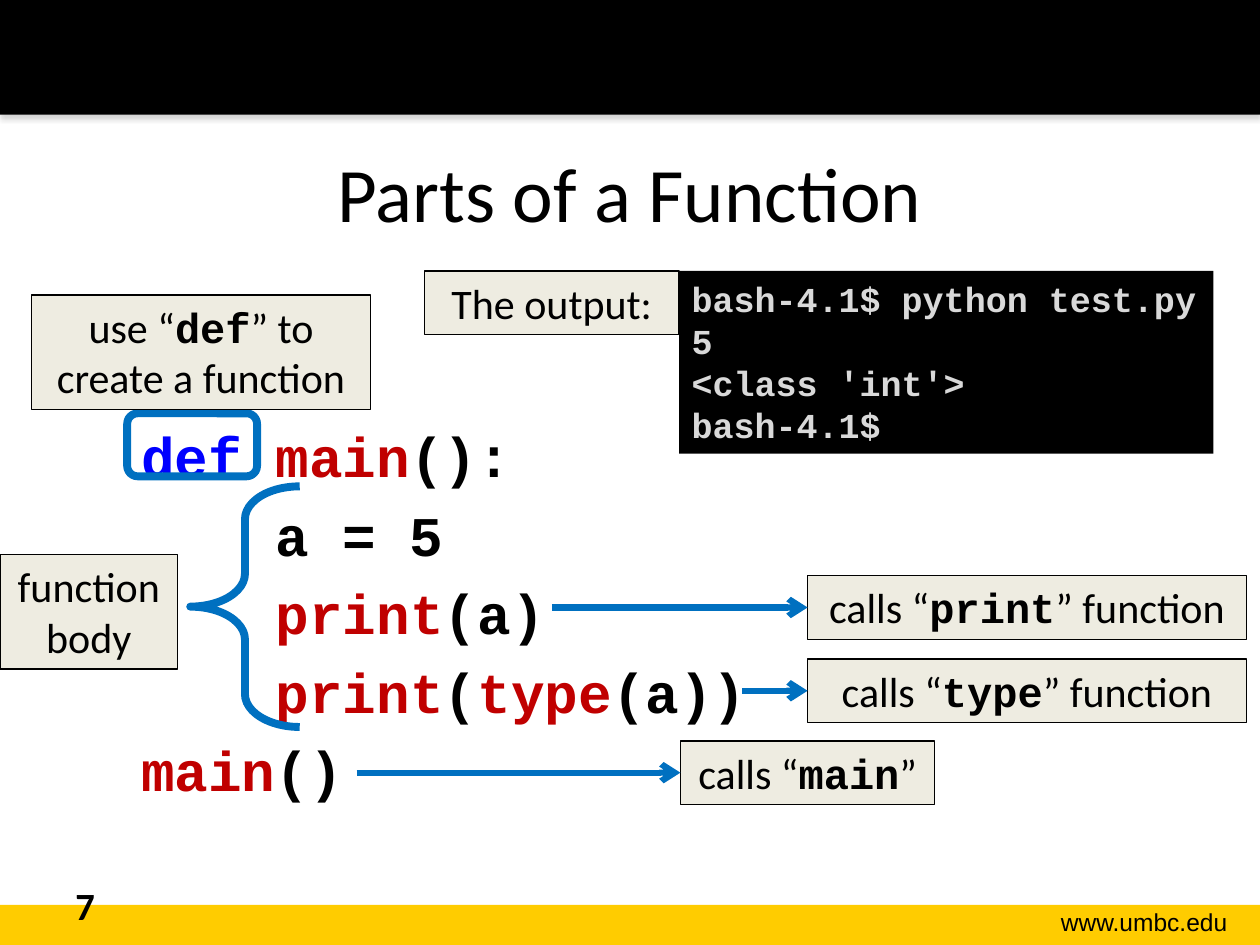
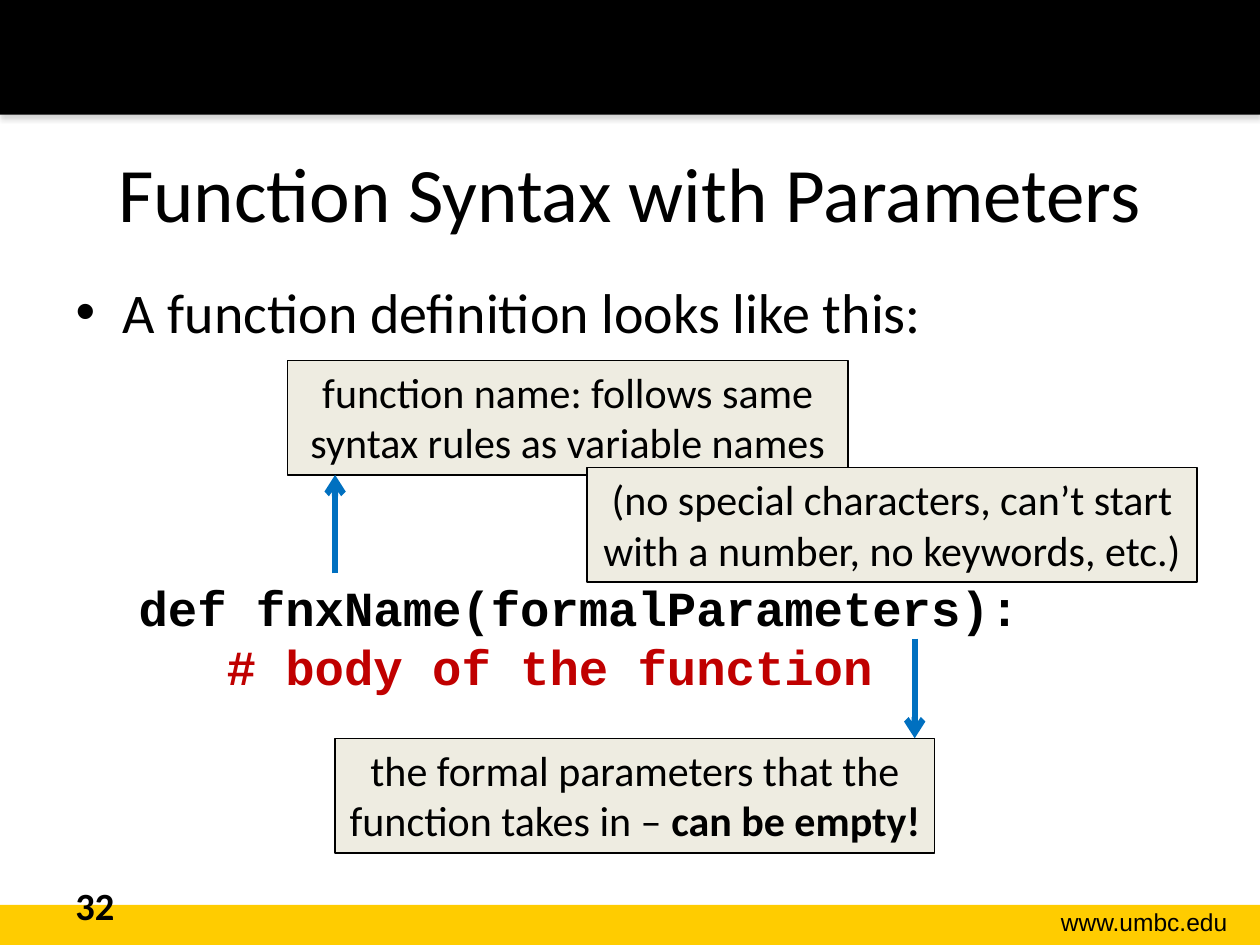
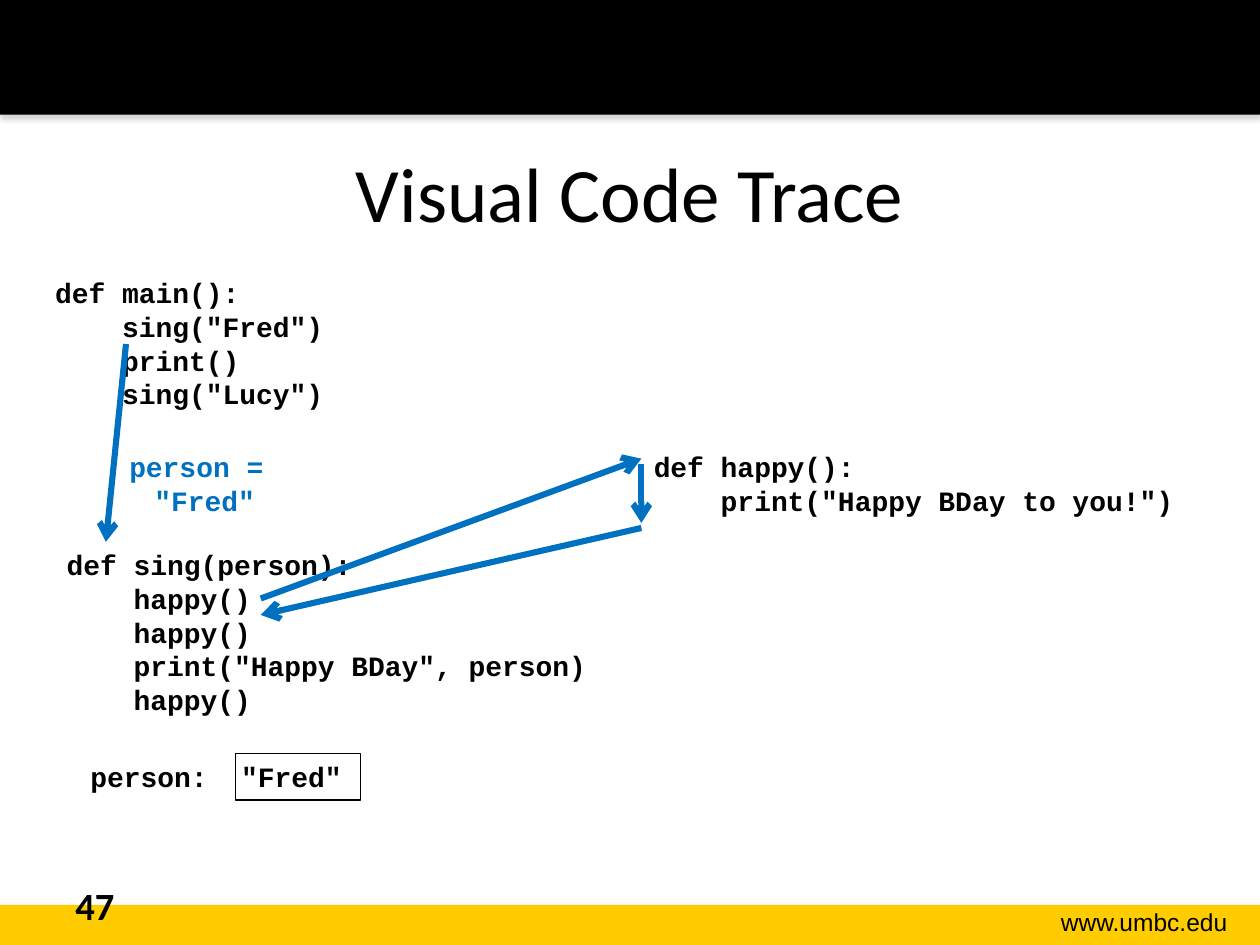
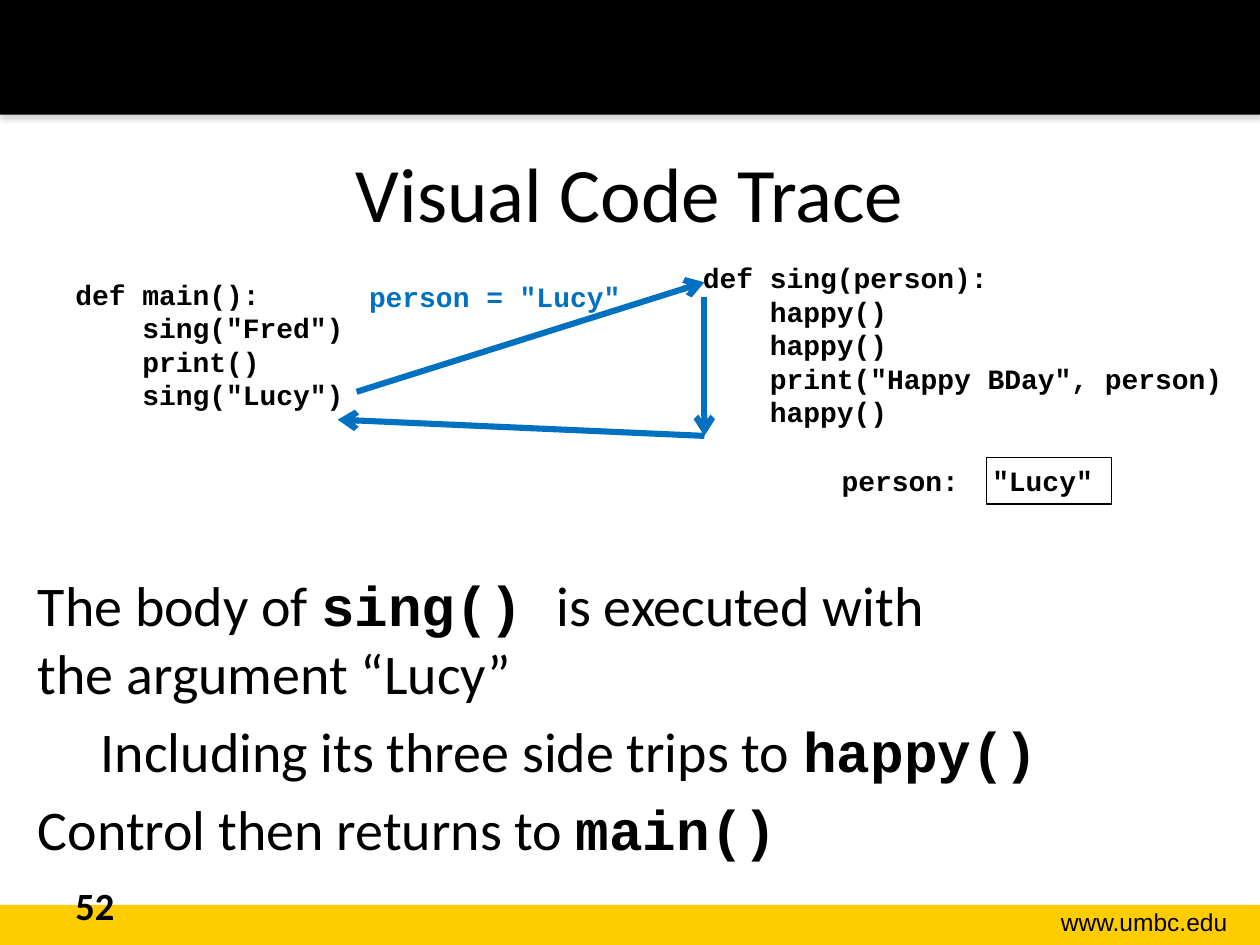
from dataclasses import dataclass
from typing import NamedTuple

from lxml import etree
from pptx import Presentation
from pptx.dml.color import RGBColor
from pptx.enum.shapes import MSO_CONNECTOR, MSO_SHAPE
from pptx.enum.text import MSO_ANCHOR, MSO_AUTO_SIZE, PP_ALIGN
from pptx.oxml.ns import qn
from pptx.util import Pt

RECTANGLE = MSO_SHAPE.RECTANGLE
ROUNDED = MSO_SHAPE.ROUNDED_RECTANGLE
BRACE = MSO_SHAPE.LEFT_BRACE
STRAIGHT = MSO_CONNECTOR.STRAIGHT
LEFT, CENTER, RIGHT = PP_ALIGN.LEFT, PP_ALIGN.CENTER, PP_ALIGN.RIGHT
MIDDLE = MSO_ANCHOR.MIDDLE
NO_AUTOFIT = MSO_AUTO_SIZE.NONE

COLORS = {
    "black": "000000",
    "gold": "FFCC00",
    "shadow": "808080",
    "callout": "EEECE1",
    "accent": "0070C0",
    "keyword": "0000FF",
    "name": "C00000",
    "terminal": "D9D9D9",
}
SANS, MONO, FOOTER_FONT = "Calibri", "Courier New", "Arial"
TITLE_CONTENT, TITLE_ONLY = 1, 5
LEFT_SITE = 1
CALLOUT_ONE_LINE, CALLOUT_TWO_LINES = 36.3, 65.5
TAB = 36

MAIN_CODE = ["def main():", '    sing("Fred")', "    print()", '    sing("Lucy")']
SING_CODE = ["def sing(person):", "    happy()", "    happy()",
             '    print("Happy BDay", person)', "    happy()"]
HAPPY_CODE = ["def happy():", '    print("Happy BDay to you!")']


class Box(NamedTuple):
    left: float
    top: float
    width: float
    height: float

    def lengths(self) -> list:
        return [Pt(value) for value in self]


class Point(NamedTuple):
    x: float
    y: float


class Run(NamedTuple):
    """A piece of text; unset values come from the text's own format."""
    text: str
    color: str | None = None
    font: str | None = None
    bold: bool | None = None


@dataclass
class Call:
    """A callout that explains a call, with an arrow from the code."""
    name: str
    ending: str
    box: Box
    arrow_start: float


def rgb(name: str) -> RGBColor:
    return RGBColor.from_string(COLORS[name])


def code(text: str, color: str | None = None) -> Run:
    return Run(text, color, MONO, True)


def write_text(frame, paragraphs: list, *, size: float, font: str = SANS, color: str = "black",
               bold: bool = False, align=LEFT) -> None:
    """Fill a frame; each paragraph is a string or a list of strings and Runs."""
    for index, content in enumerate(paragraphs):
        paragraph = frame.paragraphs[0] if index == 0 else frame.add_paragraph()
        paragraph.alignment = align
        if index == 0:
            paragraph.space_before = Pt(0)
        for item in [content] if isinstance(content, str) else content:
            piece = item if isinstance(item, Run) else Run(item)
            for line_index, line in enumerate(piece.text.split("\n")):
                if line_index:
                    paragraph.add_line_break()
                run = paragraph.add_run()
                run.text = line
                run.font.name = piece.font or font
                run.font.size = Pt(size)
                run.font.bold = bold if piece.bold is None else piece.bold
                run.font.color.rgb = rgb(piece.color or color)


def add_text(slide, box: Box, paragraphs: list, **text_format):
    frame = slide.shapes.add_textbox(*box.lengths()).text_frame
    frame.word_wrap = True
    write_text(frame, paragraphs, **text_format)


def add_code(slide, box: Box, lines: list, **text_format):
    add_text(slide, box, lines, size=16, font=MONO, bold=True, **text_format)


def add_shape(slide, kind, box: Box, *, fill: str | None = None,
              line: str | None = None, line_width: float = 0.75):
    shape = slide.shapes.add_shape(kind, *box.lengths())
    shape.shadow.inherit = False
    if fill:
        shape.fill.solid()
        shape.fill.fore_color.rgb = rgb(fill)
    else:
        shape.fill.background()
    if line:
        shape.line.color.rgb = rgb(line)
        shape.line.width = Pt(line_width)
    else:
        shape.line.fill.background()
    shape.text_frame.vertical_anchor = MSO_ANCHOR.TOP
    return shape


def add_callout(slide, box: Box, content):
    shape = add_shape(slide, RECTANGLE, box, fill="callout", line="black")
    shape.text_frame.word_wrap = True
    write_text(shape.text_frame, [content], size=24, align=CENTER)
    return shape


def add_arrow(slide, start: Point, end: Point, target=None) -> None:
    """Draw an arrow, joined to the left side of target when given."""
    arrow = slide.shapes.add_connector(STRAIGHT, *(Pt(value) for value in start + end))
    if target is not None:
        arrow.end_connect(target, LEFT_SITE)
    arrow.line.color.rgb = rgb("accent")
    arrow.line.width = Pt(3.5)
    etree.SubElement(arrow.line._get_or_add_ln(), qn("a:tailEnd"), type="arrow")
    etree.SubElement(arrow.element.spPr, qn("a:effectLst"))


def add_variable(slide, left: float, top: float, value: str) -> None:
    """Show the person variable with its value in a box."""
    add_code(slide, Box(left, top, 85, 26.6), ["person:"])
    shape = add_shape(slide, RECTANGLE, Box(left + 90, top, 71.3, 26.6), line="black")
    shape.text_frame.margin_left = Pt(3.2)
    write_text(shape.text_frame, [value], size=16, font=MONO, bold=True)


def fill_body(slide, box: Box, paragraphs: list, **text_format):
    body = slide.placeholders[1]
    body.left, body.top, body.width, body.height = box.lengths()
    body.text_frame.auto_size = NO_AUTOFIT
    write_text(body.text_frame, paragraphs, **text_format)
    return body.text_frame.paragraphs


def remove_bullet(paragraph, indent: float = 0) -> None:
    properties = paragraph._p.get_or_add_pPr()
    properties.set("marL", str(Pt(indent)))
    properties.set("indent", "0")
    etree.SubElement(properties, qn("a:buNone"))


def add_band_shadow(shape) -> None:
    effects = shape.element.spPr.find(qn("a:effectLst"))
    shadow = etree.SubElement(effects, qn("a:outerShdw"), blurRad=str(Pt(3.1)),
                              dist=str(Pt(1.8)), dir="5400000", rotWithShape="0")
    color = etree.SubElement(shadow, qn("a:srgbClr"), val=COLORS["shadow"])
    etree.SubElement(color, qn("a:alpha"), val="35000")


def decorate_master(presentation, slide) -> None:
    """Draw the bands and the address on a slide, then move them to the master."""
    first = len(slide.shapes)
    add_shape(slide, RECTANGLE, Box(0, 517, 720, 23), fill="gold")
    add_band_shadow(add_shape(slide, RECTANGLE, Box(0, 0, 720, 65.5), fill="black"))
    add_text(slide, Box(565.2, 514.8, 143.3, 24.5), ["www.umbc.edu"],
             size=14, font=FOOTER_FONT, align=RIGHT)
    tree = presentation.slide_master.shapes.element
    for index, shape in enumerate(list(slide.shapes)[first:]):
        shape.element.nvSpPr.cNvPr.set("id", str(20 + index))
        tree.append(shape.element)


def add_slide(presentation, layout: int, title: str, number: int):
    slide = presentation.slides.add_slide(presentation.slide_layouts[layout])
    heading = slide.shapes.title
    heading.left, heading.top, heading.width, heading.height = Box(36, 64.8, 648, 90).lengths()
    heading.text_frame.vertical_anchor = MIDDLE
    heading.text_frame.auto_size = NO_AUTOFIT
    write_text(heading.text_frame, [title], size=44, align=CENTER)
    add_text(slide, Box(36, 500.4, 167.8, 28.8), [str(number)], size=22, bold=True)
    return slide


def build_function_parts(presentation):
    slide = add_slide(presentation, TITLE_CONTENT, "Parts of a Function", 7)
    program = [
        [Run("def ", "keyword"), Run("main", "name"), "():"],
        "    a = 5",
        ["    ", Run("print", "name"), "(a)"],
        ["    ", Run("print", "name"), "(", Run("type", "name"), "(a))"],
        [Run("main", "name"), "()"],
    ]
    for paragraph in fill_body(slide, Box(73.4, 237.5, 440.6, 278), program,
                               size=32, font=MONO, bold=True):
        remove_bullet(paragraph)

    add_callout(slide, Box(0, 316.8, 101.5, CALLOUT_TWO_LINES), "function body")
    add_shape(slide, ROUNDED, Box(72.7, 236.2, 74.2, 36), line="accent", line_width=4.5)
    add_callout(slide, Box(18, 168.5, 193.7, CALLOUT_TWO_LINES),
                ["use “", code("def"), "” to create a function"])

    terminal = add_shape(slide, RECTANGLE, Box(388.1, 154.8, 305.3, 104.4), fill="black")
    terminal.text_frame.word_wrap = False
    write_text(terminal.text_frame,
               ["bash-4.1$ python test.py", "5", "<class 'int'>", "bash-4.1$"],
               size=20, font=MONO, color="terminal", bold=True)
    add_callout(slide, Box(242.6, 154.8, 145.4, CALLOUT_ONE_LINE), "The output:")

    brace = add_shape(slide, BRACE, Box(108.7, 277.9, 62.6, 137.5), line="accent", line_width=4.5)
    brace.adjustments[0] = 0.3

    calls = [
        Call("print", "” function", Box(461.5, 329, 250.6, CALLOUT_ONE_LINE), 315.4),
        Call("type", "” function", Box(461.5, 376.6, 250.6, CALLOUT_ONE_LINE), 424.1),
        Call("main", "”", Box(388.8, 423.4, 145.4, CALLOUT_ONE_LINE), 203.8),
    ]
    for call in calls:
        callout = add_callout(slide, call.box, ["calls “", code(call.name), call.ending])
        middle = call.box.top + call.box.height / 2
        add_arrow(slide, Point(call.arrow_start, middle), Point(call.box.left, middle), callout)
    return slide


def build_function_syntax(presentation) -> None:
    slide = add_slide(presentation, TITLE_CONTENT, "Function Syntax with Parameters", 32)
    definition = [
        Run("def fnxName(formalParameters):\n   ", font=MONO, bold=True),
        code("# body of the function", "name"),
    ]
    paragraphs = fill_body(slide, Box(36, 154.8, 648, 327.6),
                           ["A function definition looks like this:", definition], size=32)
    syntax = paragraphs[1]
    syntax.space_before = Pt(133)
    remove_bullet(syntax, TAB)
    for run in syntax.runs:
        run.font.size = Pt(28)

    add_callout(slide, Box(164.2, 205.9, 320.4, CALLOUT_TWO_LINES),
                "function name: follows same syntax rules as variable names")
    add_arrow(slide, Point(191.5, 327.6), Point(191.5, 271.4))
    add_callout(slide, Box(335.5, 267.1, 348.5, CALLOUT_TWO_LINES),
                "(no special characters, can’t start with a number, no keywords, etc.)")
    add_callout(slide, Box(191.5, 421.9, 342.7, CALLOUT_TWO_LINES),
                ["the formal parameters that the function takes in – ",
                 Run("can be empty!", bold=True)])
    add_arrow(slide, Point(522.7, 365), Point(522.7, 421.9))


def build_fred_trace(presentation) -> None:
    slide = add_slide(presentation, TITLE_ONLY, "Visual Code Trace", 47)
    add_code(slide, Box(24.5, 154.1, 201.6, 85), MAIN_CODE)
    add_code(slide, Box(31, 309.6, 319.7, 104.4), SING_CODE)
    add_code(slide, Box(64.1, 253.4, 105.8, 46.1), ['person = \n"Fred"'],
             color="accent", align=CENTER)
    add_arrow(slide, Point(72, 196.6), Point(60.5, 309.6))
    add_variable(slide, 44.6, 430.6, '"Fred"')
    add_code(slide, Box(366.5, 253.4, 317.5, 46.1), HAPPY_CODE)
    add_arrow(slide, Point(149, 342), Point(366.5, 262.1))
    add_arrow(slide, Point(366.5, 265), Point(366.5, 298.8))
    add_arrow(slide, Point(366.5, 301.7), Point(149, 351.4))


def build_lucy_trace(presentation) -> None:
    slide = add_slide(presentation, TITLE_CONTENT, "Visual Code Trace", 52)
    add_code(slide, Box(36, 154.8, 201.6, 85), MAIN_CODE)
    add_code(slide, Box(394.6, 145.4, 319.7, 104.4), SING_CODE)
    add_code(slide, Box(203.8, 156.2, 161.3, 26.6), ['person = "Lucy"'], color="accent")
    add_variable(slide, 473.8, 261.4, '"Lucy"')
    explanation = [
        ["The body of ", code("sing() "), "is executed with\nthe argument “Lucy”"],
        ["Including its three side trips to ", code("happy()")],
        ["Control then returns to ", code("main()")],
    ]
    paragraphs = fill_body(slide, Box(14.4, 322.6, 644.4, 177.8), explanation, size=32)
    for paragraph, indent in zip(paragraphs, (0, TAB, 0)):
        remove_bullet(paragraph, indent)
    add_arrow(slide, Point(203.8, 223.9), Point(402.5, 161.3))
    add_arrow(slide, Point(402.5, 170), Point(402.5, 249.1))
    add_arrow(slide, Point(402.5, 249.1), Point(193, 239.8))


def main() -> None:
    presentation = Presentation()
    presentation.slide_width, presentation.slide_height = Pt(720), Pt(540)
    first_slide = build_function_parts(presentation)
    decorate_master(presentation, first_slide)
    build_function_syntax(presentation)
    build_fred_trace(presentation)
    build_lucy_trace(presentation)
    presentation.save("out.pptx")


if __name__ == "__main__":
    main()
